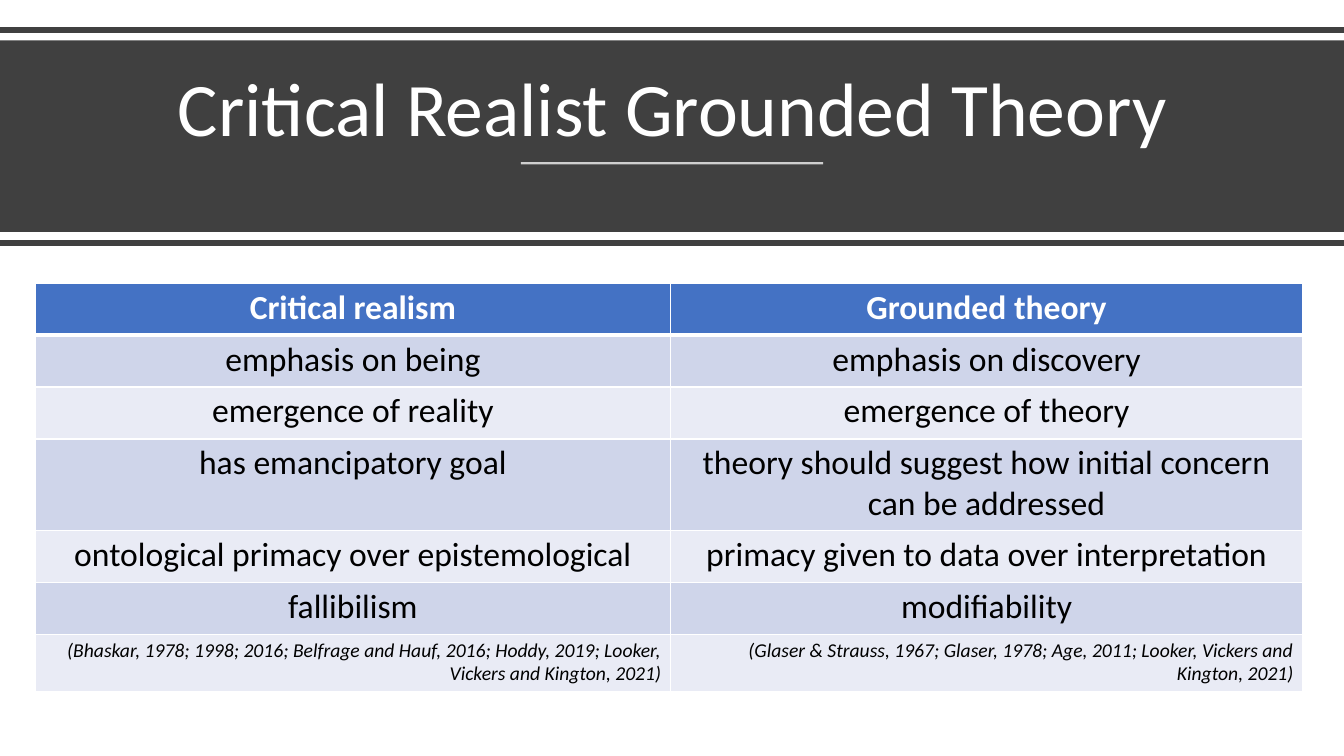
"""Build the Critical Realist Grounded Theory comparison slide."""
from lxml import etree
from pptx import Presentation, util as u
from pptx.dml.color import RGBColor
from pptx.enum import shapes, text
from pptx.oxml import ns

WHITE = RGBColor(0xFF, 0xFF, 0xFF)
BLACK = RGBColor(0, 0, 0)
CHARCOAL = RGBColor(0x40, 0x40, 0x40)
HEADER_BLUE = RGBColor(0x44, 0x72, 0xC4)
BANDS = RGBColor(0xE9, 0xEB, 0xF5), RGBColor(0xCF, 0xD5, 0xEA)

W, H = u.Inches(13.33), u.Inches(7.5)
COLUMNS = 6.3, 6.27
ROW, TALL_ROW, SOURCE_ROW = 0.515, 0.91, 0.57
ROWS = [ROW] * 3 + [TALL_ROW] + [ROW] * 2 + [SOURCE_ROW]
COMPARISON = [
    ("Critical realism", "Grounded theory"),
    ("emphasis on being", "emphasis on discovery"),
    ("emergence of reality", "emergence of theory"),
    ("has emancipatory goal",
     "theory should suggest how initial concern can be addressed"),
    ("ontological primacy over epistemological",
     "primacy given to data over interpretation"),
    ("fallibilism", "modifiability"),
    ("(Bhaskar, 1978; 1998; 2016; Belfrage and Hauf, 2016; Hoddy, 2019; "
     "Looker, Vickers and Kington, 2021)",
     "(Glaser & Strauss, 1967; Glaser, 1978; Age, 2011; "
     "Looker, Vickers and Kington, 2021)"),
]


def write(tf, words, size=24, color=BLACK, bold=False, italic=False,
          align=text.PP_ALIGN.CENTER, spacing=None):
    """Put one formatted paragraph into a text frame."""
    p = tf.paragraphs[0]
    p.alignment, p.line_spacing = align, spacing
    r = p.add_run()
    r.text = words
    r.font.name, r.font.size = "Calibri", u.Pt(size)
    r.font.bold, r.font.italic = bold, italic
    r.font.color.rgb = color


def add_rule(s, y, left=0, right=W, color=CHARCOAL, width=4, opacity=100):
    """Draw a horizontal line at a height given in inches."""
    y = u.Inches(y)
    line = s.shapes.add_connector(shapes.MSO_CONNECTOR.STRAIGHT, left, y, right, y)
    line.line.color.rgb, line.line.width = color, u.Pt(width)
    etree.SubElement(line._element.spPr, ns.qn("a:effectLst"))
    if opacity < 100:
        fill = line._element.spPr.find(".//" + ns.qn("a:srgbClr"))
        etree.SubElement(fill, ns.qn("a:alpha"), val=str(opacity * 1000))


def add_banner(s, title):
    """Draw the dark title band with its rules and heading."""
    add_rule(s, 0.3)
    band = s.shapes.add_shape(shapes.MSO_SHAPE.RECTANGLE, 0, u.Inches(0.4),
                              W, u.Inches(1.9))
    band.shadow.inherit = False
    band.fill.solid()
    band.fill.fore_color.rgb = CHARCOAL
    band.line.fill.background()
    tf = s.shapes.add_textbox(u.Inches(0.58), u.Inches(0.54),
                              u.Inches(12.18), u.Inches(1.02)).text_frame
    tf.word_wrap, tf.vertical_anchor = True, text.MSO_ANCHOR.BOTTOM
    write(tf, title, size=54, color=WHITE, spacing=0.9)
    half = u.Inches(1.5)
    add_rule(s, 1.62, W // 2 - half, W // 2 + half, WHITE, 1.5, 75)
    add_rule(s, 2.41)


def add_borders(cell, **widths):
    """Give a cell white borders with widths in points by side."""
    tcPr = cell._tc.get_or_add_tcPr()
    for side, width in widths.items():
        ln = etree.SubElement(tcPr, ns.qn("a:ln" + side), w=str(u.Pt(width)))
        fill = etree.SubElement(ln, ns.qn("a:solidFill"))
        etree.SubElement(fill, ns.qn("a:srgbClr"), val=str(WHITE))


def style_for(row):
    """Return the text format of a table row."""
    if row == 0:
        return dict(color=WHITE, bold=True)
    if row == len(ROWS) - 1:
        return dict(size=14, italic=True, align=text.PP_ALIGN.RIGHT)
    return {}


def add_comparison(s):
    """Build the two-column banded table."""
    table = s.shapes.add_table(
        len(ROWS), len(COLUMNS), u.Inches(0.35), u.Inches(2.81),
        u.Inches(sum(COLUMNS)), u.Inches(sum(ROWS))).table
    for column, width in zip(table.columns, COLUMNS):
        column.width = u.Inches(width)
    for i, (row, height) in enumerate(zip(table.rows, ROWS)):
        row.height = u.Inches(height)
        for cell, words in zip(row.cells, COMPARISON[i]):
            cell.margin_left = cell.margin_right = u.Inches(0.09)
            cell.margin_top = cell.margin_bottom = u.Inches(0.04)
            add_borders(cell, L=1, R=1, T=3 if i == 1 else 1, B=1 if i else 3)
            cell.fill.solid()
            cell.fill.fore_color.rgb = BANDS[i % 2] if i else HEADER_BLUE
            write(cell.text_frame, words, **style_for(i))


def main():
    """Create and save the presentation."""
    prs = Presentation()
    prs.slide_width, prs.slide_height = W, H
    s = prs.slides.add_slide(prs.slide_layouts[6])
    add_banner(s, "Critical Realist Grounded Theory")
    add_comparison(s)
    prs.save("out.pptx")


if __name__ == "__main__":
    main()
